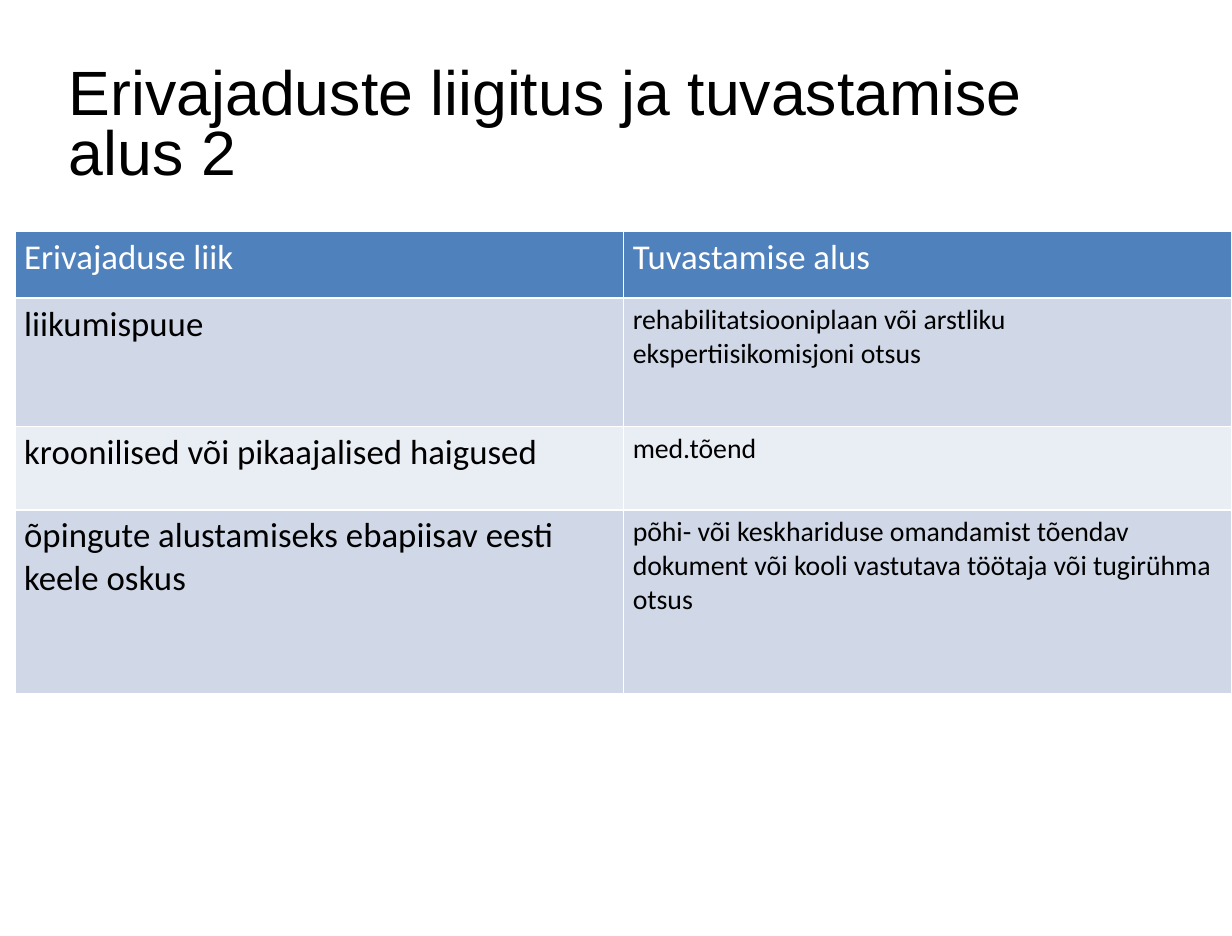
from lxml.etree import SubElement as Sub
from pptx import Presentation
from pptx.dml.color import RGBColor
from pptx.enum.text import MSO_ANCHOR as Anchor, MSO_AUTO_SIZE as Fit, PP_ALIGN as Align
from pptx.oxml.ns import qn
from pptx.util import Cm, Pt

BLACK = RGBColor(0x00, 0x00, 0x00)
WHITE = RGBColor(0xFF, 0xFF, 0xFF)
BLUE = RGBColor(0x4F, 0x81, 0xBD)
BANDS = [RGBColor(0xE9, 0xED, 0xF4), RGBColor(0xD0, 0xD8, 0xE8)]

ROWS = [
    ("Erivajaduse liik", "Tuvastamise alus"),
    ("liikumispuue", "rehabilitatsiooniplaan või arstliku ekspertiisikomisjoni otsus"),
    ("kroonilised või pikaajalised haigused", "med.tõend"),
    ("õpingute alustamiseks ebapiisav eesti keele oskus",
     "põhi- või keskhariduse omandamist tõendav dokument või kooli vastutava "
     "töötaja või tugirühma otsus"),
]
HEIGHTS = [1.35, 2.61, 1.69, 3.73]
LEFT, TOP, COL = 0.3, 4.7, 12.35


def style(font, name, size, color):
    font.name = name
    font.size = Pt(size)
    font.bold = False
    font.color.rgb = color


def edge(cell):
    """Draw a thin white line on all four sides of the cell."""
    props = cell._tc.get_or_add_tcPr()
    for side in ("lnL", "lnR", "lnT", "lnB"):
        line = Sub(props, qn(f"a:{side}"), w=str(Pt(1)))
        fill = Sub(line, qn("a:solidFill"))
        Sub(fill, qn("a:srgbClr"), val=str(WHITE))


deck = Presentation()
deck.slide_width = Cm(25)
deck.slide_height = Cm(19)
slide = deck.slides.add_slide(deck.slide_layouts.get_by_name("Title Only"))

title = slide.shapes.title
title.left, title.top = Cm(1.4), Cm(0.84)
title.width, title.height = Cm(20.9), Cm(3.5)
frame = title.text_frame
frame.text = "Erivajaduste liigitus ja tuvastamise alus 2"
frame.word_wrap = True
frame.auto_size = Fit.NONE
frame.vertical_anchor = Anchor.MIDDLE
frame.margin_left = frame.margin_right = frame.margin_top = frame.margin_bottom = 0
para = frame.paragraphs[0]
para.alignment = Align.LEFT
para.line_spacing = 0.8
style(para.runs[0].font, "Arial", 36, BLACK)

table = slide.shapes.add_table(
    len(ROWS), 2, Cm(LEFT), Cm(TOP), Cm(2 * COL), Cm(sum(HEIGHTS))).table
for col in table.columns:
    col.width = Cm(COL)

for r, (texts, height) in enumerate(zip(ROWS, HEIGHTS)):
    table.rows[r].height = Cm(height)
    head = r == 0
    for c, text in enumerate(texts):
        cell = table.cell(r, c)
        cell.text = text
        cell.margin_left = cell.margin_right = Cm(0.19)
        cell.margin_top = cell.margin_bottom = Cm(0.1)
        edge(cell)
        cell.fill.solid()
        cell.fill.fore_color.rgb = BLUE if head else BANDS[r % 2]
        size = 20 if head or c == 0 else 16
        font = cell.text_frame.paragraphs[0].runs[0].font
        style(font, "Calibri", size, WHITE if head else BLACK)

deck.save("out.pptx")
